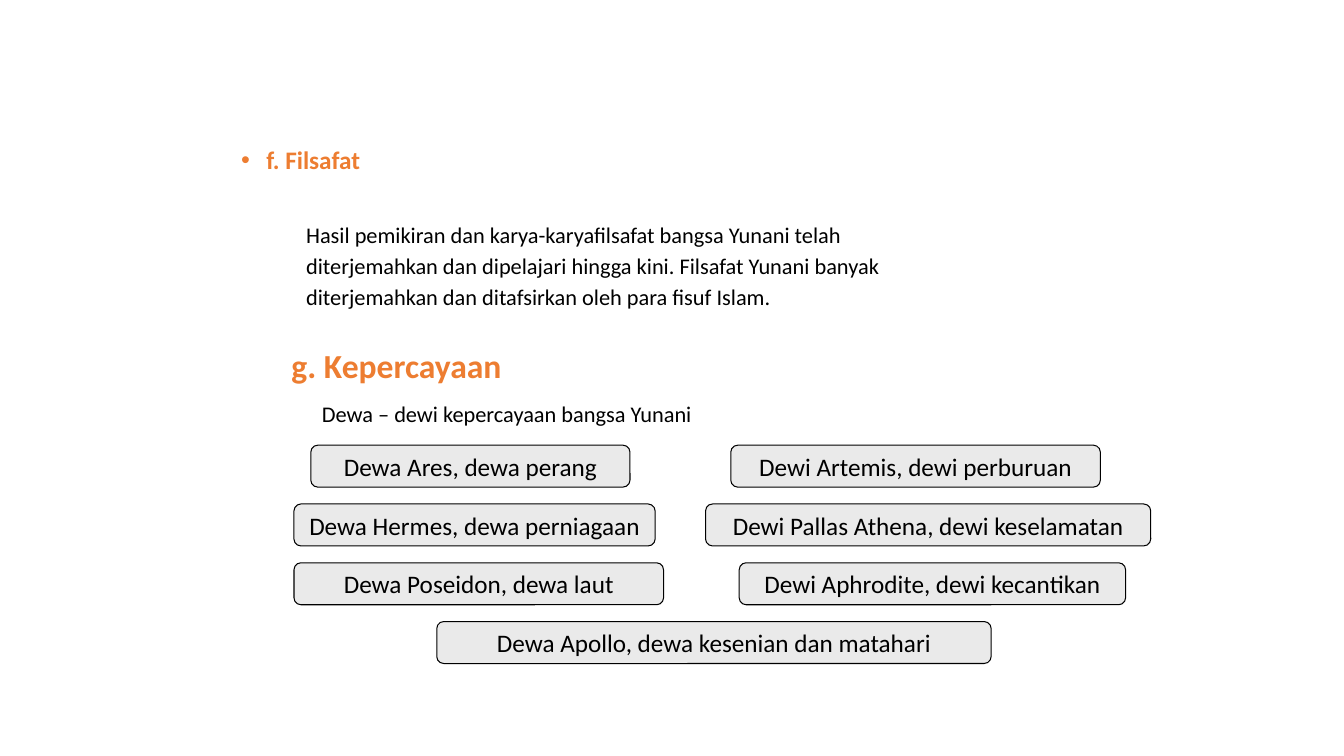
"""Build the slide on Greek philosophy and the gods of Greek belief."""
from dataclasses import dataclass

from lxml.etree import SubElement
from pptx import Presentation
from pptx.dml.color import RGBColor
from pptx.enum.shapes import MSO_SHAPE
from pptx.enum.text import MSO_ANCHOR, MSO_AUTO_SIZE, PP_ALIGN
from pptx.oxml.ns import qn
from pptx.slide import Slide
from pptx.util import Pt

PX = 9525
FONT = "Calibri"
COLORS = {"accent": "ED7D31", "text": "000000", "box": "EAEAEA"}
ROW_TOP, ROW_STEP, BOX_HEIGHT = 424, 56, 40


@dataclass(frozen=True)
class Line:
    text: str
    size: int
    left: int
    before: int = 5
    heading: bool = False
    bullet: bool = False


@dataclass(frozen=True)
class God:
    text: str
    row: int
    left: int
    width: int


LINES = [
    Line("f. Filsafat", 18, 24, before=0, heading=True, bullet=True),
    Line("Hasil pemikiran dan karya-karyafilsafat bangsa Yunani telah", 16, 62, before=35),
    Line("diterjemahkan dan dipelajari hingga kini. Filsafat Yunani banyak", 16, 62),
    Line("diterjemahkan dan ditafsirkan oleh para fisuf Islam.", 16, 62),
    Line("g. Kepercayaan", 24, 48, before=28, heading=True),
    Line("Dewa – dewi kepercayaan bangsa Yunani", 16, 77, before=12),
]

GODS = [
    God("Dewa Ares, dewa perang", 0, 296, 304),
    God("Dewi Artemis, dewi perburuan", 0, 696, 352),
    God("Dewa Hermes, dewa perniagaan", 1, 280, 344),
    God("Dewi Pallas Athena, dewi keselamatan", 1, 672, 424),
    God("Dewa Poseidon, dewa laut", 2, 280, 352),
    God("Dewi Aphrodite, dewi kecantikan", 2, 704, 368),
    God("Dewa Apollo, dewa kesenian dan matahari", 3, 416, 528),
]


def color(name: str) -> RGBColor:
    return RGBColor.from_string(COLORS[name])


def format_line(para, line: Line) -> None:
    para.text = line.text
    para.level = 0 if line.bullet else 1
    para.alignment = PP_ALIGN.LEFT
    para.line_spacing = 0.9
    para.space_before = Pt(line.before)
    para.space_after = Pt(0)
    properties = para._p.get_or_add_pPr()
    properties.set("marL", str(line.left * PX))
    properties.set("indent", str(-line.left * PX if line.bullet else 0))
    if line.bullet:
        SubElement(properties, qn("a:buFont"), typeface="Arial")
        SubElement(properties, qn("a:buChar"), char="•")
    else:
        SubElement(properties, qn("a:buNone"))
    font = para.runs[0].font
    font.name = FONT
    font.size = Pt(line.size)
    font.bold = line.heading
    font.color.rgb = color("accent" if line.heading else "text")


def fill_body(page: Slide) -> None:
    body = page.placeholders[1]
    body.left, body.top, body.width, body.height = (
        value * PX for value in (220, 136, 840, 496))
    frame = body.text_frame
    frame.word_wrap = True
    frame.auto_size = MSO_AUTO_SIZE.NONE
    frame.vertical_anchor = MSO_ANCHOR.TOP
    for index, line in enumerate(LINES):
        para = frame.add_paragraph() if index else frame.paragraphs[0]
        format_line(para, line)


def draw_god(page: Slide, god: God) -> None:
    top = ROW_TOP + god.row * ROW_STEP
    box = page.shapes.add_shape(
        MSO_SHAPE.ROUNDED_RECTANGLE,
        god.left * PX, top * PX, god.width * PX, BOX_HEIGHT * PX)
    box.shadow.inherit = False
    box.fill.solid()
    box.fill.fore_color.rgb = color("box")
    box.line.color.rgb = color("text")
    box.line.width = Pt(0.75)
    frame = box.text_frame
    frame.text = god.text
    frame.word_wrap = False
    frame.vertical_anchor = MSO_ANCHOR.MIDDLE
    para = frame.paragraphs[0]
    para.alignment = PP_ALIGN.CENTER
    font = para.runs[0].font
    font.name = FONT
    font.size = Pt(18)
    font.color.rgb = color("text")


def main() -> None:
    deck = Presentation()
    deck.slide_width, deck.slide_height = 1280 * PX, 720 * PX
    page = deck.slides.add_slide(deck.slide_layouts[1])
    title = page.shapes.title.element
    title.getparent().remove(title)
    fill_body(page)
    for god in GODS:
        draw_god(page, god)
    deck.save("out.pptx")


if __name__ == "__main__":
    main()
